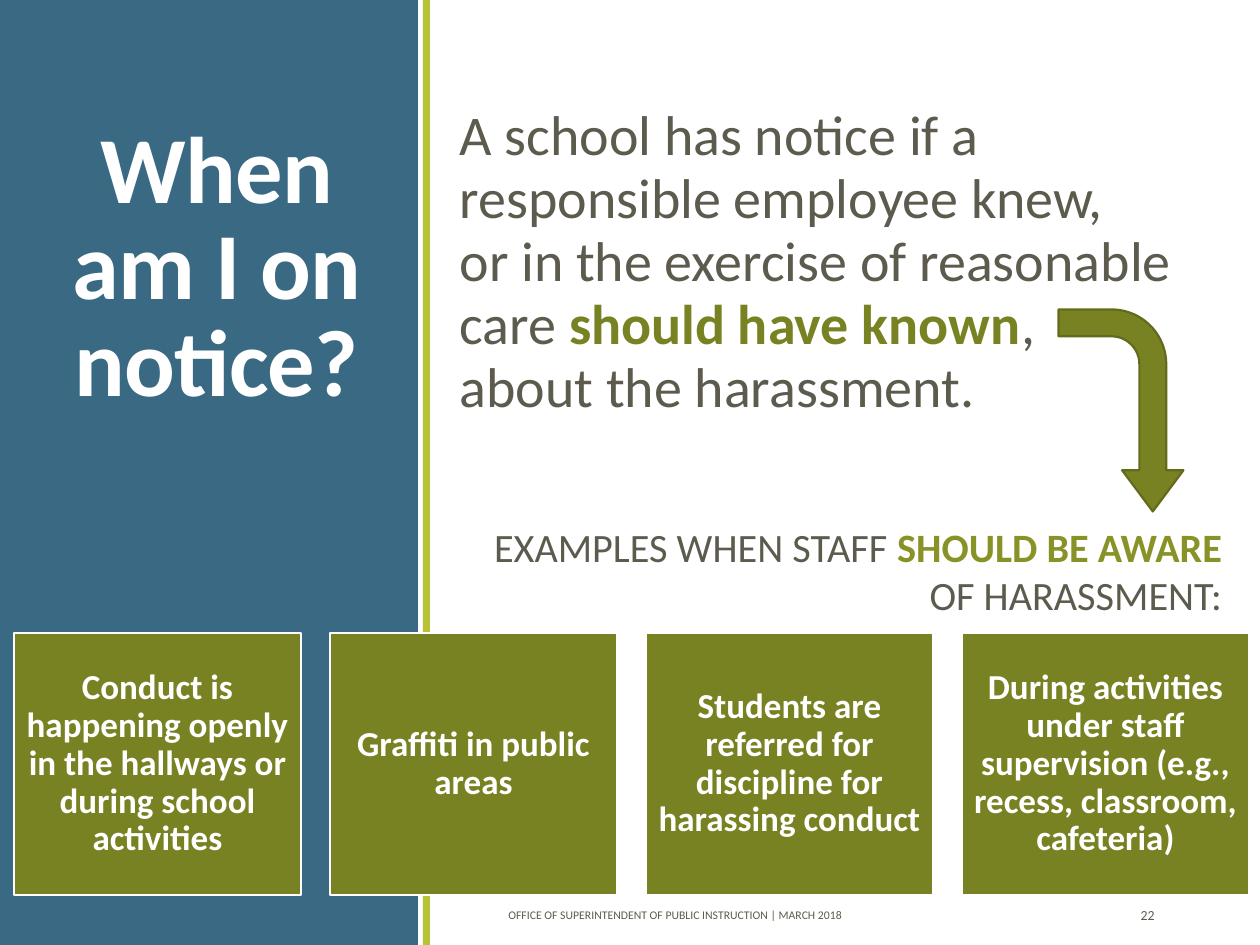
from pptx import Presentation
from pptx.dml.color import RGBColor
from pptx.enum.shapes import MSO_SHAPE
from pptx.enum.text import MSO_ANCHOR, MSO_AUTO_SIZE, PP_ALIGN
from pptx.util import Emu, Pt
from lxml.etree import SubElement
from pptx.oxml.ns import qn

BLUE = RGBColor(0x3A, 0x69, 0x83)
LIME = RGBColor(0xB7, 0xC3, 0x33)
OLIVE = RGBColor(0x79, 0x82, 0x22)
DARK_OLIVE = RGBColor(0x63, 0x6A, 0x1C)
BRIGHT_OLIVE = RGBColor(0x89, 0x92, 0x26)
GRAY = RGBColor(0x5D, 0x5B, 0x4E)
WHITE = RGBColor(0xFF, 0xFF, 0xFF)
SCALE = 914400 / 126


def px(*lengths):
    return [Emu(round(n * SCALE)) for n in lengths]


def write(shape, *parts, size, color=GRAY, bold=False, align=PP_ALIGN.LEFT,
          anchor=MSO_ANCHOR.TOP, spacing=1.0, inset=None, tracking=None):
    frame = shape.text_frame
    frame.word_wrap = True
    frame.auto_size = MSO_AUTO_SIZE.NONE
    frame.vertical_anchor = anchor
    if inset is not None:
        frame.margin_left = frame.margin_right = px(inset)[0]
        frame.margin_top = frame.margin_bottom = px(inset)[0]
    paragraph = frame.paragraphs[0]
    paragraph.alignment = align
    paragraph.line_spacing = spacing
    paragraph.space_before = Pt(0)
    for part in parts:
        text, accent = part if isinstance(part, tuple) else (part, None)
        for index, line in enumerate(text.split("\n")):
            if index:
                paragraph.add_line_break()
            run = paragraph.add_run()
            run.text = line
            font = run.font
            font.name = "Calibri"
            font.size = Pt(size)
            font.bold = bold or accent is not None
            font.color.rgb = accent or color
            if tracking is not None:
                run._r.get_or_add_rPr().set("spc", str(tracking))


prs = Presentation()
prs.slide_width, prs.slide_height = px(1260, 945)
slide = prs.slides.add_slide(prs.slide_layouts[1])
shapes = slide.shapes

for left, width, color in [(0, 418, BLUE), (423, 7, LIME)]:
    band = shapes.add_shape(MSO_SHAPE.RECTANGLE, *px(left, 0, width, 945))
    band.shadow.inherit = False
    band.fill.solid()
    band.fill.fore_color.rgb = color
    band.line.fill.background()
    shapes._spTree.insert(2, band._element)

footer = shapes.add_textbox(*px(496, 890, 480, 50))
write(footer, "OFFICE OF SUPERINTENDENT OF PUBLIC INSTRUCTION | MARCH 2018",
      size=6.7, anchor=MSO_ANCHOR.MIDDLE)
page_number = shapes.add_textbox(*px(1031, 890, 136, 50))
write(page_number, "22", size=7.9, align=PP_ALIGN.RIGHT, anchor=MSO_ANCHOR.MIDDLE)

examples = [
    "Conduct is happening openly in the hallways or during school activities",
    "Graffiti in public areas",
    "Students are referred for discipline for harassing conduct",
    "During activities under staff supervision (e.g., recess, classroom, cafeteria)",
]
for column, example in enumerate(examples):
    card = shapes.add_shape(MSO_SHAPE.RECTANGLE, *px(14 + 316 * column, 633, 287, 262))
    card.shadow.inherit = False
    card.fill.solid()
    card.fill.fore_color.rgb = OLIVE
    card.line.color.rgb = WHITE
    card.line.width = Pt(1.25)
    write(card, example, size=20, color=WHITE, bold=True, align=PP_ALIGN.CENTER,
          anchor=MSO_ANCHOR.MIDDLE, spacing=0.9, inset=10)

lead_in = shapes.add_textbox(*px(455, 516, 780, 111))
write(lead_in, "EXAMPLES WHEN STAFF ", ("SHOULD BE AWARE ", BRIGHT_OLIVE),
      "OF HARASSMENT:", size=23, align=PP_ALIGN.RIGHT)

arrow = shapes.add_shape(MSO_SHAPE.BENT_ARROW, *px(1020, 348, 202, 125))
arrow.rotation = 90
for index, value in enumerate([0.215, 0.246, 0.33, 0.438]):
    arrow.adjustments[index] = value
arrow.shadow.inherit = False
arrow.fill.solid()
arrow.fill.fore_color.rgb = OLIVE
arrow.line.color.rgb = DARK_OLIVE
arrow.line.width = Pt(1.25)

definition = slide.placeholders[1]
definition.left, definition.top, definition.width, definition.height = px(447, 97, 746, 331)
properties = definition.text_frame.paragraphs[0]._p.get_or_add_pPr()
properties.set("marL", "0")
properties.set("indent", "0")
SubElement(properties, qn("a:buNone"))
write(definition, "A school has notice if a responsible employee knew,\n"
      "or in the exercise of reasonable care ", ("should have known", OLIVE),
      ",\nabout the harassment.", size=32, spacing=Pt(36))

title = shapes.title
title.left, title.top, title.width, title.height = px(29, 107, 375, 315)
write(title, "When am I on notice?", size=54, color=WHITE, bold=True,
      align=PP_ALIGN.CENTER, anchor=MSO_ANCHOR.BOTTOM, spacing=0.85, tracking=-40)

prs.save("out.pptx")
